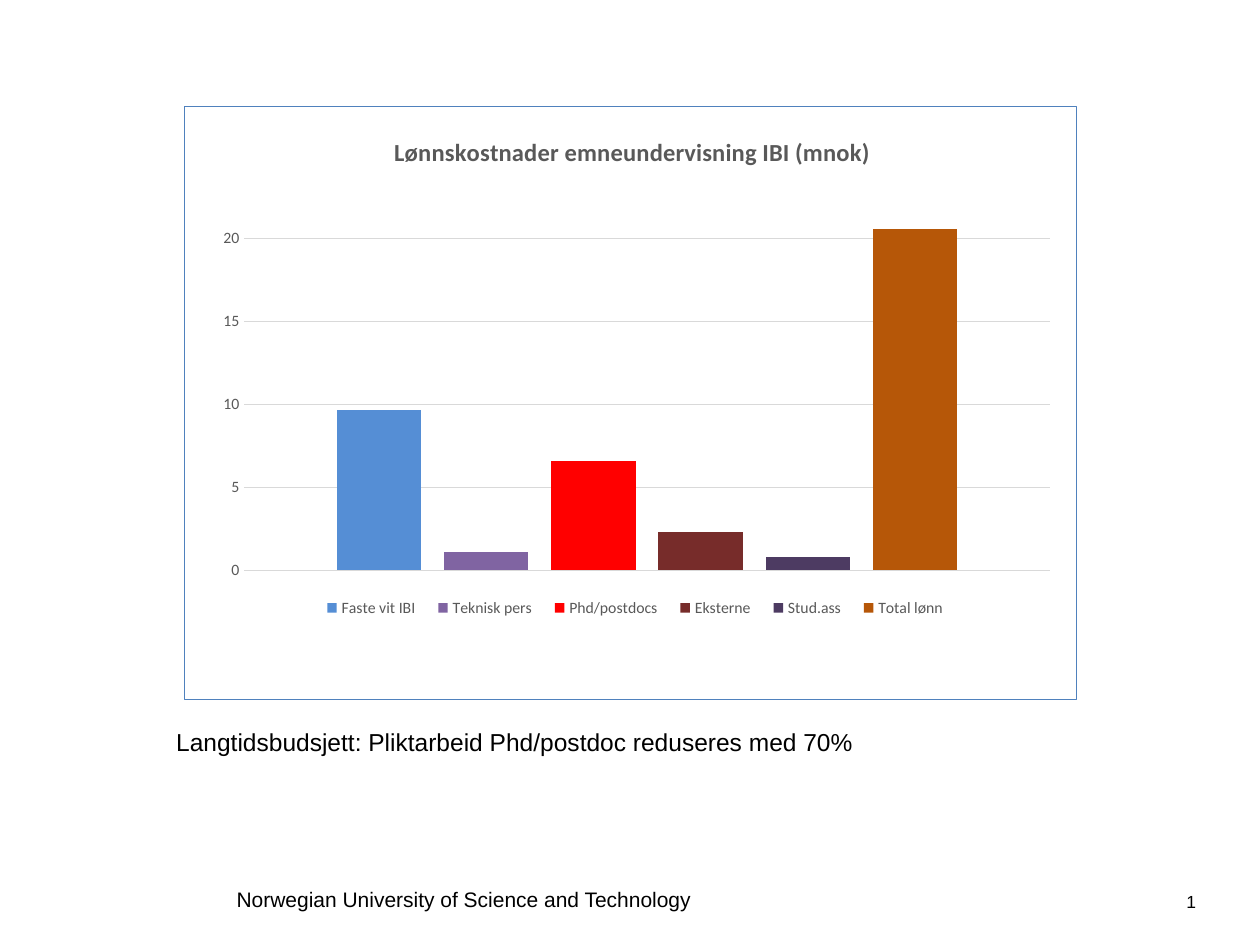
import pptx
import pptx.chart.data
import pptx.dml.color
import pptx.enum.chart
import pptx.enum.text
import pptx.oxml
import pptx.oxml.ns
import pptx.util

RGB = pptx.dml.color.RGBColor
BLACK = RGB(0x00, 0x00, 0x00)
GRAY = RGB(0x59, 0x59, 0x59)
GRID = RGB(0xD9, 0xD9, 0xD9)
EDGE = RGB(0x4F, 0x81, 0xBD)
BLUE = RGB(0x55, 0x8E, 0xD5)
VIOLET = RGB(0x80, 0x64, 0xA2)
RED = RGB(0xFF, 0x00, 0x00)
MAROON = RGB(0x77, 0x2C, 0x2A)
PLUM = RGB(0x4D, 0x3B, 0x62)
ORANGE = RGB(0xB6, 0x57, 0x08)

WIDE, HIGH = 10, 7.5
COSTS = [
    ("Faste vit IBI", 9.7, BLUE),
    ("Teknisk pers", 1.1, VIOLET),
    ("Phd/postdocs", 6.6, RED),
    ("Eksterne", 2.3, MAROON),
    ("Stud.ass", 0.8, PLUM),
    ("Total lønn", 20.6, ORANGE),
]


def frame(x, y, w, h):
    """Turn shares of the slide, in percent, into lengths."""
    return [pptx.util.Inches(share * side / 100)
            for share, side in zip((x, y, w, h), (WIDE, HIGH, WIDE, HIGH))]


def style(font, size, color=GRAY, name="Calibri", bold=False):
    font.size, font.name, font.bold = pptx.util.Pt(size), name, bold
    font.color.rgb = color


def add_text(slide, text, box, size=12, align="LEFT", wrap=True):
    body = slide.shapes.add_textbox(*frame(*box)).text_frame
    body.word_wrap = wrap
    line = body.paragraphs[0]
    line.alignment = getattr(pptx.enum.text.PP_ALIGN, align)
    run = line.add_run()
    run.text = text
    style(run.font, size, BLACK, "Arial")


def place(chart, tag, index, inner=False, **shares):
    """Give a chart part a fixed place, in shares of the chart."""
    part = chart.element.xpath(f".//c:{tag}")[0]
    for old in part.xpath("./c:layout"):
        part.remove(old)
    target = '<c:layoutTarget val="inner"/>' if inner else ""
    modes = "".join(f'<c:{key}Mode val="edge"/>' for key in "xy")
    sides = "".join(f'<c:{key} val="{val}"/>' for key, val in shares.items())
    part.insert(index, pptx.oxml.parse_xml(
        f'<c:layout {pptx.oxml.ns.nsdecls("c")}><c:manualLayout>'
        f"{target}{modes}{sides}</c:manualLayout></c:layout>"))


def add_edge(chart):
    """Draw a thin border round the whole chart."""
    chart.element.xpath("./c:chart")[0].addnext(pptx.oxml.parse_xml(
        f'<c:spPr {pptx.oxml.ns.nsdecls("c", "a")}><a:noFill/>'
        f'<a:ln w="{pptx.util.Pt(0.75)}"><a:solidFill>'
        f'<a:srgbClr val="{EDGE}"/></a:solidFill></a:ln></c:spPr>'))


def set_axes(chart):
    chart.category_axis.visible = False
    axis = chart.value_axis
    axis.minimum_scale, axis.maximum_scale, axis.major_unit = 0, 22, 5
    axis.major_tick_mark = pptx.enum.chart.XL_TICK_MARK.NONE
    axis.format.line.fill.background()
    style(axis.tick_labels.font, 9)
    line = axis.major_gridlines.format.line
    line.color.rgb, line.width = GRID, pptx.util.Pt(0.75)


def add_chart(slide, box, title):
    data = pptx.chart.data.CategoryChartData()
    data.categories = ["1"]
    for name, cost, _ in COSTS:
        data.add_series(name, [cost])
    kind = pptx.enum.chart.XL_CHART_TYPE.COLUMN_CLUSTERED
    chart = slide.shapes.add_chart(kind, *frame(*box), data).chart
    style(chart.font, 10, BLACK)
    add_edge(chart)
    set_axes(chart)

    plot = chart.plots[0]
    plot.gap_width, plot.overlap, plot.vary_by_categories = 219, -27, False
    for bar, (_, _, color) in zip(plot.series, COSTS):
        bar.format.fill.solid()
        bar.format.fill.fore_color.rgb = color
    place(chart, "plotArea", 0, True, x=0.067, y=0.167, w=0.903, h=0.615)

    chart.has_title = True
    head = chart.chart_title.text_frame.paragraphs[0].add_run()
    head.text = title
    style(head.font, 14, bold=True)
    place(chart, "title", 1, x=0.23, y=0.04)

    chart.has_legend = True
    chart.legend.position = pptx.enum.chart.XL_LEGEND_POSITION.BOTTOM
    chart.legend.include_in_layout = False
    style(chart.legend.font, 9)
    place(chart, "legend", 1, x=0.14, y=0.81, w=0.73, h=0.07)


def main():
    deck = pptx.Presentation()
    deck.slide_width = pptx.util.Inches(WIDE)
    deck.slide_height = pptx.util.Inches(HIGH)
    slide = deck.slides.add_slide(deck.slide_layouts[6])
    add_text(slide, "Norwegian University of Science and Technology",
             (17.8, 93.2, 41.7, 4))
    add_text(slide, "1", (92.7, 93.6, 3.7, 5.33), size=10, align="CENTER")
    add_chart(slide, (14.6, 11.2, 70.9, 62.93),
              "Lønnskostnader emneundervisning IBI (mnok)")
    add_text(slide,
             "Langtidsbudsjett: Pliktarbeid Phd/postdoc reduseres med 70%",
             (13, 76.27, 56, 4.53), size=14, wrap=False)
    deck.save("out.pptx")


if __name__ == "__main__":
    main()
